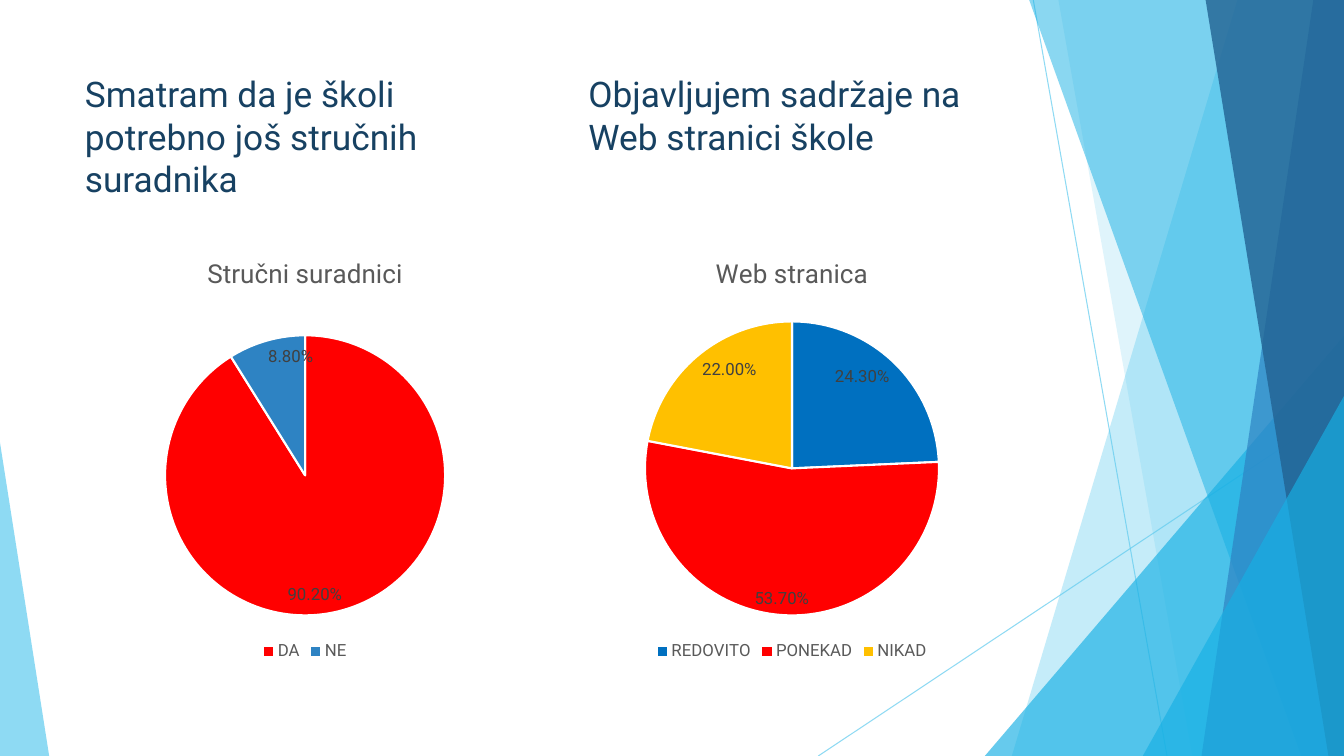
from dataclasses import dataclass

from lxml import etree
from pptx import Presentation
from pptx.chart.data import CategoryChartData
from pptx.dml.color import RGBColor
from pptx.enum.chart import XL_CHART_TYPE, XL_LABEL_POSITION, XL_LEGEND_POSITION
from pptx.enum.shapes import MSO_CONNECTOR, MSO_SHAPE
from pptx.oxml.ns import qn
from pptx.util import Cm, Pt

PIE = XL_CHART_TYPE.PIE
INSIDE_END = XL_LABEL_POSITION.INSIDE_END
LEGEND_BOTTOM = XL_LEGEND_POSITION.BOTTOM
STRAIGHT = MSO_CONNECTOR.STRAIGHT
TRIANGLE = MSO_SHAPE.ISOSCELES_TRIANGLE

SKY = RGBColor(0x5F, 0xCB, 0xEF)
CYAN = RGBColor(0x17, 0xB0, 0xE4)
BLUE = RGBColor(0x2E, 0x83, 0xC3)
DEEP = RGBColor(0x22, 0x62, 0x92)
NAVY = RGBColor(0x17, 0x41, 0x62)
GREY = RGBColor(0x59, 0x59, 0x59)
DARK_GREY = RGBColor(0x40, 0x40, 0x40)
RED = RGBColor(0xFF, 0x00, 0x00)
AZURE = RGBColor(0x00, 0x70, 0xC0)
AMBER = RGBColor(0xFF, 0xC0, 0x00)
WHITE = RGBColor(0xFF, 0xFF, 0xFF)

FONT = "Roboto"
PAGE_WIDTH, PAGE_HEIGHT = 33.87, 19.05
BAND_TOP = -0.02
CHART_TOP, CHART_WIDTH, CHART_HEIGHT = 5.99, 11.62, 10.77
PIE_BOTTOM = 9.52  # measured from the top of the chart


@dataclass
class Ray:
    start: tuple[float, float]
    end: tuple[float, float]


@dataclass
class Band:
    """Slanted left edge, reaching to the right side of the page."""
    top_left: float
    bottom_left: float
    color: RGBColor
    opacity: int


@dataclass
class Wedge:
    """Right-angled triangle standing on the bottom of the page."""
    left: float
    top: float
    width: float
    apex: float
    color: RGBColor
    opacity: int


@dataclass
class Survey:
    left: float
    heading: str
    title: str
    answers: dict[str, tuple[float, RGBColor]]
    diameter: float


RAYS = [
    Ray((26.04, 0), (29.41, PAGE_HEIGHT)),
    Ray((PAGE_WIDTH, 10.24), (20.62, PAGE_HEIGHT)),
]
FACETS = [
    Band(31.19, 25.5, SKY, 36),
    Band(26.67, 30.05, SKY, 20),
    Wedge(24.82, 8.46, 9.05, 1, CYAN, 66),
    Band(25.93, 32.79, CYAN, 50),
    Band(33.1, 30.28, BLUE, 70),
    Band(30.38, 33.48, DEEP, 80),
    Wedge(28.8, 9.98, 5.07, 1, CYAN, 66),
    Wedge(0, 11.15, 1.24, 0, SKY, 70),
]
SURVEYS = [
    Survey(1.88, "Smatram da je školi\vpotrebno još stručnih\vsuradnika",
           "Stručni suradnici",
           {"DA": (0.902, RED), "NE": (0.088, BLUE)}, 7.06),
    Survey(14.15, "Objavljujem sadržaje na\vWeb stranici škole",
           "Web stranica",
           {"REDOVITO": (0.243, AZURE), "PONEKAD": (0.537, RED),
            "NIKAD": (0.22, AMBER)}, 7.41),
]


def set_opacity(fill, percent: int) -> None:
    for color in fill._xPr.iter(qn("a:srgbClr")):
        etree.SubElement(color, qn("a:alpha"), val=str(percent * 1000))


def draw_ray(page, ray: Ray) -> None:
    line = page.shapes.add_connector(STRAIGHT, *map(Cm, ray.start + ray.end))
    line.line.width = Pt(0.75)
    line.line.color.rgb = SKY
    set_opacity(line.line.fill, 70)
    etree.SubElement(line.element.spPr, qn("a:effectLst"))


def draw_facet(page, facet: Band | Wedge) -> None:
    if isinstance(facet, Band):
        outline = page.shapes.build_freeform(Cm(facet.top_left), Cm(BAND_TOP))
        corners = [(PAGE_WIDTH, BAND_TOP), (PAGE_WIDTH, PAGE_HEIGHT),
                   (facet.bottom_left, PAGE_HEIGHT)]
        outline.add_line_segments([(Cm(x), Cm(y)) for x, y in corners])
        shape = outline.convert_to_shape()
    else:
        shape = page.shapes.add_shape(
            TRIANGLE, Cm(facet.left), Cm(facet.top),
            Cm(facet.width), Cm(PAGE_HEIGHT - facet.top))
        shape.adjustments[0] = facet.apex
    shape.shadow.inherit = False
    shape.line.fill.background()
    shape.fill.solid()
    shape.fill.fore_color.rgb = facet.color
    set_opacity(shape.fill, facet.opacity)


def format_font(font, *, size: float, color: RGBColor) -> None:
    font.name, font.size, font.bold = FONT, Pt(size), False
    font.color.rgb = color


def add_text(frame, text: str, *, size: float, color: RGBColor) -> None:
    frame.text = text
    for para in frame.paragraphs:
        format_font(para.font, size=size, color=color)
        for span in para.runs:
            format_font(span.font, size=size, color=color)


def place_pie(chart, diameter: float) -> None:
    """Centre the pie across the chart, standing on the common bottom line."""
    plot_area = chart.element.xpath("c:chart/c:plotArea")[0]
    for old in plot_area.findall(qn("c:layout")):
        plot_area.remove(old)
    layout = etree.Element(qn("c:layout"))
    plot_area.insert(0, layout)
    manual = etree.SubElement(layout, qn("c:manualLayout"))
    settings = {
        "layoutTarget": "inner", "xMode": "edge", "yMode": "edge",
        "x": (1 - diameter / CHART_WIDTH) / 2,
        "y": (PIE_BOTTOM - diameter) / CHART_HEIGHT,
        "w": diameter / CHART_WIDTH,
        "h": diameter / CHART_HEIGHT,
    }
    for name, value in settings.items():
        etree.SubElement(manual, qn(f"c:{name}"), val=str(value))


def draw_survey(page, survey: Survey) -> None:
    # Heading
    box = page.shapes.add_textbox(Cm(survey.left + 0.01), Cm(1.7), Cm(11), Cm(3.35))
    box.text_frame.word_wrap = True
    add_text(box.text_frame, survey.heading, size=25.2, color=NAVY)
    if survey.left > PAGE_WIDTH / 3:
        box.left = Cm(survey.left + 0.43)

    # Chart with title and legend
    data = CategoryChartData(number_format="0.00%")
    data.categories = list(survey.answers)
    data.add_series(survey.title, [value for value, _ in survey.answers.values()])
    chart = page.shapes.add_chart(
        PIE, Cm(survey.left), Cm(CHART_TOP), Cm(CHART_WIDTH), Cm(CHART_HEIGHT), data).chart
    format_font(chart.font, size=12, color=GREY)
    chart.has_title = True
    add_text(chart.chart_title.text_frame, survey.title, size=18.6, color=GREY)
    chart.has_legend = True
    chart.legend.position = LEGEND_BOTTOM
    chart.legend.include_in_layout = False
    format_font(chart.legend.font, size=12, color=GREY)
    place_pie(chart, survey.diameter)

    # Slices and their labels
    plot = chart.plots[0]
    plot.vary_by_categories = True
    for index, (_, color) in enumerate(survey.answers.values()):
        piece = plot.series[0].points[index].format
        piece.fill.solid()
        piece.fill.fore_color.rgb = color
        piece.line.width = Pt(1.5)
        piece.line.color.rgb = WHITE
    plot.has_data_labels = True
    labels = plot.data_labels
    labels.show_value, labels.show_percentage = True, False
    labels.number_format, labels.number_format_is_linked = "0.00%", False
    labels.position = INSIDE_END
    format_font(labels.font, size=12, color=DARK_GREY)


def main() -> None:
    deck = Presentation()
    deck.slide_width, deck.slide_height = Cm(PAGE_WIDTH), Cm(PAGE_HEIGHT)
    page = deck.slides.add_slide(deck.slide_layouts[6])
    for ray in RAYS:
        draw_ray(page, ray)
    for facet in FACETS:
        draw_facet(page, facet)
    for survey in SURVEYS:
        draw_survey(page, survey)
    deck.save("out.pptx")


if __name__ == "__main__":
    main()
